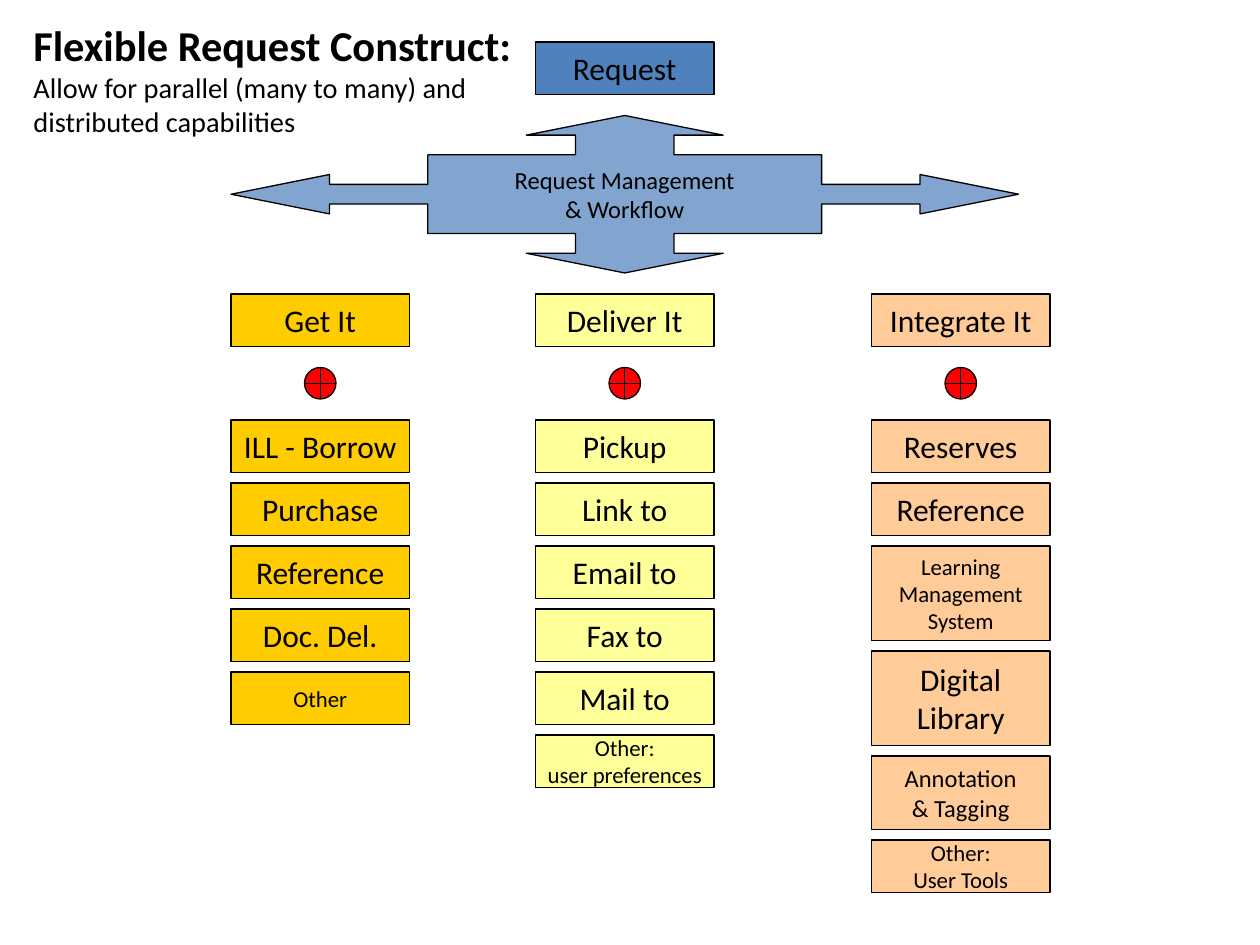
import pptx
import pptx.util
import pptx.dml.color
import pptx.enum.shapes
import pptx.enum.text
import pptx.oxml
import pptx.oxml.ns

RGBColor = pptx.dml.color.RGBColor
MSO_SHAPE = pptx.enum.shapes.MSO_SHAPE
BLACK = RGBColor(0x00, 0x00, 0x00)
BLUE = RGBColor(0x4F, 0x81, 0xBD)
GOLD = RGBColor(0xFF, 0xCC, 0x00)
YELLOW = RGBColor(0xFF, 0xFF, 0x99)
PEACH = RGBColor(0xFF, 0xCC, 0x99)
RED = RGBColor(0xFF, 0x00, 0x00)

TITLE_RUNS = [
    ("Flexible Request Construct: ", {"size": pptx.util.Pt(24.3), "bold": True}),
    ("Allow for parallel (many to many) and distributed capabilities",
     {"size": pptx.util.Pt(16.2), "bold": False}),
]
REQUEST = "Request"
WORKFLOW = "Request Management\n& Workflow"
SERVICES = [
    {"column": 22, "color": GOLD, "heading": "Get It", "options": [
        ("ILL - Borrow", 18, 5), ("Purchase", 18, 5), ("Reference", 18, 5),
        ("Doc. Del.", 18, 5), ("Other", 13, 5)]},
    {"column": 51, "color": YELLOW, "heading": "Deliver It", "options": [
        ("Pickup", 18, 5), ("Link to", 18, 5), ("Email to", 18, 5),
        ("Fax to", 18, 5), ("Mail to", 18, 5),
        ("Other:\nuser preferences", 13, 5)]},
    {"column": 83, "color": PEACH, "heading": "Integrate It", "options": [
        ("Reserves", 18, 5), ("Reference", 18, 5),
        ("Learning\nManagement\nSystem", 13, 9), ("Digital\nLibrary", 18, 9),
        ("Annotation\n& Tagging", 14, 7), ("Other:\nUser Tools", 13, 5)]},
]

CELL = pptx.util.Inches(1) / 12
BOX_WIDTH, BOX_HEIGHT, GAP = 17, 5, 1
REQUEST_COLUMN, REQUEST_ROW = 51, 4
HEADING_ROW, JUNCTION_ROW, OPTIONS_ROW = 28, 35, 40
JUNCTION_SIZE = 3
ARROW_LEFT, ARROW_TOP, ARROW_WIDTH, ARROW_HEIGHT = 22, 11, 75, 15
ARROW_UNITS = 16
ARROW_QUARTER = [(0, 8), (2, 6), (1, 6), (1, 4), (4, 4), (4, 1), (6, 1), (6, 2)]


def grid(*cells):
    return [round(cell * CELL) for cell in cells]


def apply_format(target, values):
    for name, value in values.items():
        setattr(target, name, value)


def style_shape(shape, color):
    shape.shadow.inherit = False
    shape.fill.solid()
    shape.fill.fore_color.rgb = color
    shape.line.color.rgb = BLACK
    shape.line.width = pptx.util.Pt(0.75)


def write_label(shape, label, size):
    frame = shape.text_frame
    frame.text = label
    apply_format(frame, {"word_wrap": False,
                         "vertical_anchor": pptx.enum.text.MSO_ANCHOR.MIDDLE})
    for paragraph in frame.paragraphs:
        paragraph.alignment = pptx.enum.text.PP_ALIGN.CENTER
        apply_format(paragraph.font, {"name": "Calibri", "size": pptx.util.Pt(size)})
        paragraph.font.color.rgb = BLACK


def add_box(slide, column, row, height, label, size, color):
    shape = slide.shapes.add_shape(MSO_SHAPE.RECTANGLE,
                                   *grid(column, row, BOX_WIDTH, height))
    style_shape(shape, color)
    write_label(shape, label, size)


def add_title(slide):
    frame = slide.shapes.add_textbox(*grid(2, 0, 51, 15)).text_frame
    apply_format(frame, {"word_wrap": True,
                         "vertical_anchor": pptx.enum.text.MSO_ANCHOR.MIDDLE})
    paragraph = frame.paragraphs[0]
    for index, (text, values) in enumerate(TITLE_RUNS):
        if index:
            paragraph.add_line_break()
        run = paragraph.add_run()
        run.text = text
        apply_format(run.font, {"name": "Calibri", **values})
        run.font.color.rgb = BLACK


def add_service(slide, service):
    column, color = service["column"], service["color"]
    add_box(slide, column, HEADING_ROW, BOX_HEIGHT, service["heading"], 18, color)
    junction = slide.shapes.add_shape(
        MSO_SHAPE.FLOWCHART_OR,
        *grid(column + (BOX_WIDTH - JUNCTION_SIZE) / 2, JUNCTION_ROW,
              JUNCTION_SIZE, JUNCTION_SIZE))
    style_shape(junction, RED)
    row = OPTIONS_ROW
    for label, size, height in service["options"]:
        add_box(slide, column, row, height, label, size, color)
        row += height + GAP


def add_workflow_arrow(slide):
    points, quarter = [], ARROW_QUARTER
    for turn in range(4):
        points += quarter
        quarter = [(y, -x) for x, y in quarter]
    scale = (ARROW_WIDTH * CELL / ARROW_UNITS, ARROW_HEIGHT * CELL / ARROW_UNITS)
    builder = slide.shapes.build_freeform(*points[0], scale=scale)
    builder.add_line_segments(points[1:], close=True)
    arrow = builder.convert_to_shape(*grid(ARROW_LEFT + ARROW_WIDTH / 2,
                                           ARROW_TOP + ARROW_HEIGHT / 2))
    style_shape(arrow, BLUE)
    color = arrow.fill._xPr.find(pptx.oxml.ns.qn("a:solidFill"))[0]
    alpha = pptx.oxml.parse_xml(
        f'<a:alpha {pptx.oxml.ns.nsdecls("a")} val="71000"/>')
    color.append(alpha)
    write_label(arrow, WORKFLOW, 14)


def main():
    presentation = pptx.Presentation()
    presentation.slide_width = pptx.util.Inches(10)
    presentation.slide_height = pptx.util.Inches(7.5)
    slide = presentation.slides.add_slide(presentation.slide_layouts[6])
    add_title(slide)
    add_box(slide, REQUEST_COLUMN, REQUEST_ROW, BOX_HEIGHT, REQUEST, 18, BLUE)
    for service in SERVICES:
        add_service(slide, service)
    add_workflow_arrow(slide)
    presentation.save("out.pptx")


if __name__ == "__main__":
    main()
